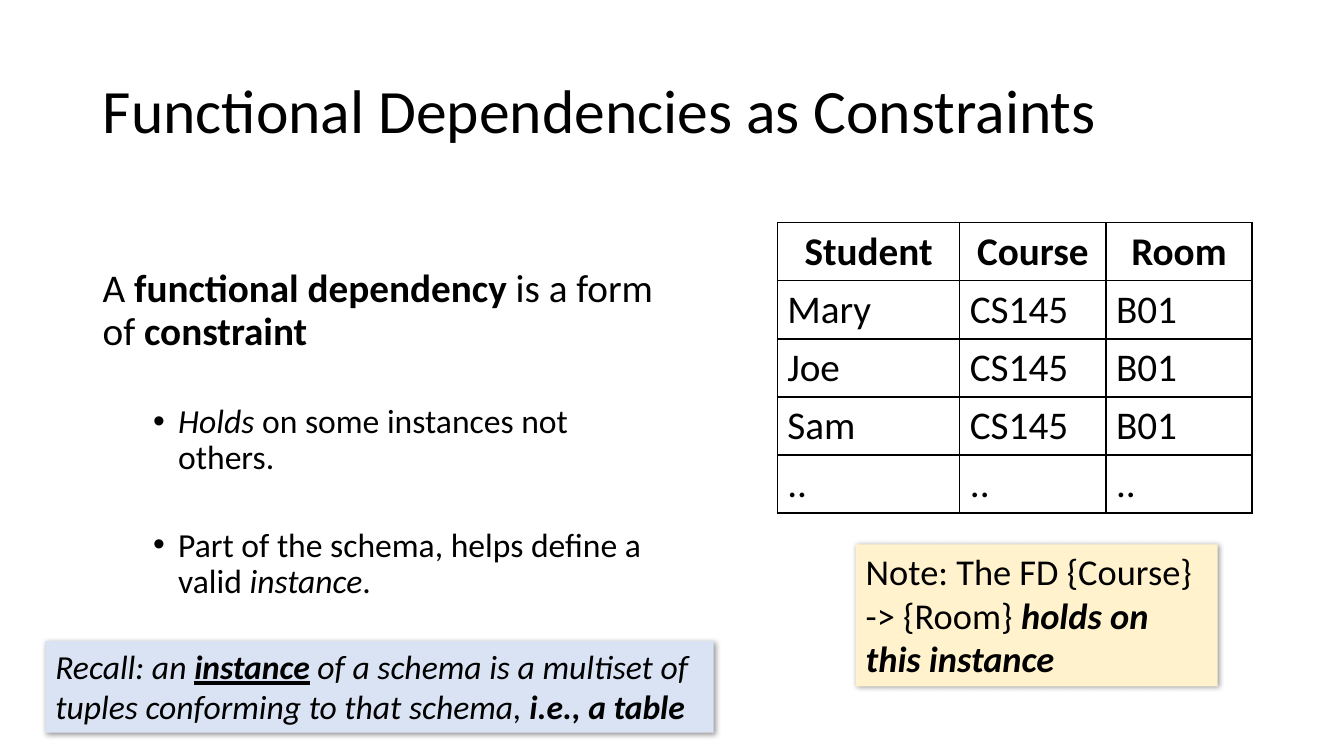
import pptx
import pptx.dml.color
import pptx.enum.shapes
import pptx.enum.text
import pptx.oxml
import pptx.oxml.ns
import pptx.util

WIDTH = pptx.util.Inches(13.333)
HEIGHT = pptx.util.Inches(7.5)
FONT = "Calibri"
INK = "000000"
NAMESPACE = pptx.oxml.ns.nsdecls("a")
ALIGN = pptx.enum.text.PP_ALIGN
ANCHOR = pptx.enum.text.MSO_ANCHOR


def color(hex_code):
    return pptx.dml.color.RGBColor.from_string(hex_code)


def area(left, top, width, height):
    return (round(WIDTH * left / 100), round(HEIGHT * top / 100),
            round(WIDTH * width / 100), round(HEIGHT * height / 100))


def write(paragraph, pieces, size, align=ALIGN.LEFT, bold=None, italic=None):
    paragraph.alignment = align
    font = paragraph.font
    font.name, font.size, font.color.rgb = FONT, pptx.util.Pt(size), color(INK)
    font.bold, font.italic = bold, italic
    for words, style in pieces:
        run = paragraph.add_run()
        run.text = words
        if "b" in style:
            run.font.bold = True
        if "i" in style:
            run.font.italic = True
        if "u" in style:
            run.font.underline = True


def add_title(slide, words, place):
    title = slide.shapes.title
    title.left, title.top, title.width, title.height = place
    title.text_frame.vertical_anchor = ANCHOR.MIDDLE
    heading = title.text_frame.paragraphs[0]
    write(heading, [(words, "")], 44)
    heading.line_spacing = 0.9


def add_bullet(paragraph):
    properties = paragraph._p.get_or_add_pPr()
    properties.set("marL", str(pptx.util.Inches(0.75)))
    properties.set("indent", str(pptx.util.Inches(-0.25)))
    for tag in ('buFont {} typeface="Arial"', 'buChar {} char="•"'):
        properties.insert_element_before(
            pptx.oxml.parse_xml(f"<a:{tag.format(NAMESPACE)}/>"),
            "a:tabLst", "a:defRPr", "a:extLst")


def add_body(slide, statement, points, place):
    frame = slide.shapes.add_textbox(*place).text_frame
    frame.word_wrap = True
    lead = frame.paragraphs[0]
    write(lead, statement, 28)
    lead.line_spacing, lead.space_before = 0.9, pptx.util.Pt(10)
    for pieces in points:
        point = frame.add_paragraph()
        write(point, pieces, 24)
        point.line_spacing, point.space_before = 0.9, pptx.util.Pt(36.4)
        point.level = 1
        add_bullet(point)


def add_note(slide, pieces, size, fill, place, italic=None):
    note = slide.shapes.add_shape(pptx.enum.shapes.MSO_SHAPE.RECTANGLE, *place)
    note.fill.solid()
    note.fill.fore_color.rgb = color(fill)
    note.line.fill.background()
    note.shadow.inherit = False
    effects = note._element.spPr.find(pptx.oxml.ns.qn("a:effectLst"))
    effects.append(pptx.oxml.parse_xml(
        f'<a:outerShdw {NAMESPACE} blurRad="50800" dist="12700" dir="2700000" '
        f'algn="tl" rotWithShape="0"><a:srgbClr val="{INK}">'
        '<a:alpha val="40000"/></a:srgbClr></a:outerShdw>'))
    frame = note.text_frame
    frame.word_wrap = True
    frame.vertical_anchor = ANCHOR.TOP
    frame.auto_size = pptx.enum.text.MSO_AUTO_SIZE.SHAPE_TO_FIT_TEXT
    write(frame.paragraphs[0], pieces, size, italic=italic)


def add_borders(cell):
    properties = cell._tc.get_or_add_tcPr()
    for position, side in enumerate(("lnL", "lnR", "lnT", "lnB")):
        properties.insert(position, pptx.oxml.parse_xml(
            f'<a:{side} {NAMESPACE} w="12700"><a:solidFill>'
            f'<a:srgbClr val="{INK}"/></a:solidFill></a:{side}>'))


def add_instance(slide, records, shares, place):
    table = slide.shapes.add_table(len(records), len(shares), *place).table
    table.horz_banding = False
    for column, share in zip(table.columns, shares):
        column.width = round(place[2] * share / sum(shares))
    for r, record in enumerate(records):
        header = r == 0
        for c, value in enumerate(record):
            cell = table.cell(r, c)
            cell.fill.background()
            add_borders(cell)
            write(cell.text_frame.paragraphs[0], [(value, "")], 28,
                  ALIGN.CENTER if header else ALIGN.LEFT, bold=header)


def main():
    deck = pptx.Presentation()
    deck.slide_width, deck.slide_height = WIDTH, HEIGHT
    slide = deck.slides.add_slide(deck.slide_layouts[5])

    add_title(slide, "Functional Dependencies as Constraints",
              area(6.9, 5.33, 86.25, 19.33))
    add_instance(slide, [
        ("Student", "Course", "Room"),
        ("Mary", "CS145", "B01"),
        ("Joe", "CS145", "B01"),
        ("Sam", "CS145", "B01"),
        ("..", "..", ".."),
    ], (5, 4, 4), area(57.83, 29.47, 35.33, 38.4))
    add_note(slide, [("Note: The FD {Course} -> {Room} ", ""),
                     ("holds on this instance", "bi")],
             26, "FFF2CC", area(63.68, 72, 26.93, 18.8))
    add_body(slide, [("A ", ""), ("functional dependency ", "b"),
                     ("is a form of ", ""), ("constraint", "b")], [
        [("Holds", "i"), (" on some instances not others.", "")],
        [("Part of the schema, helps define a valid ", ""),
         ("instance", "i"), (".", "")],
    ], area(6.9, 34.93, 42.75, 58.4))
    add_note(slide, [("Recall: an ", ""), ("instance", "bu"),
                     (" of a schema is a multiset of tuples conforming "
                      "to that schema, ", ""), ("i.e., a table", "b")],
             24, "DAE3F3", area(3.38, 84.8, 49.73, 12.13), italic=True)
    deck.save("out.pptx")


if __name__ == "__main__":
    main()
